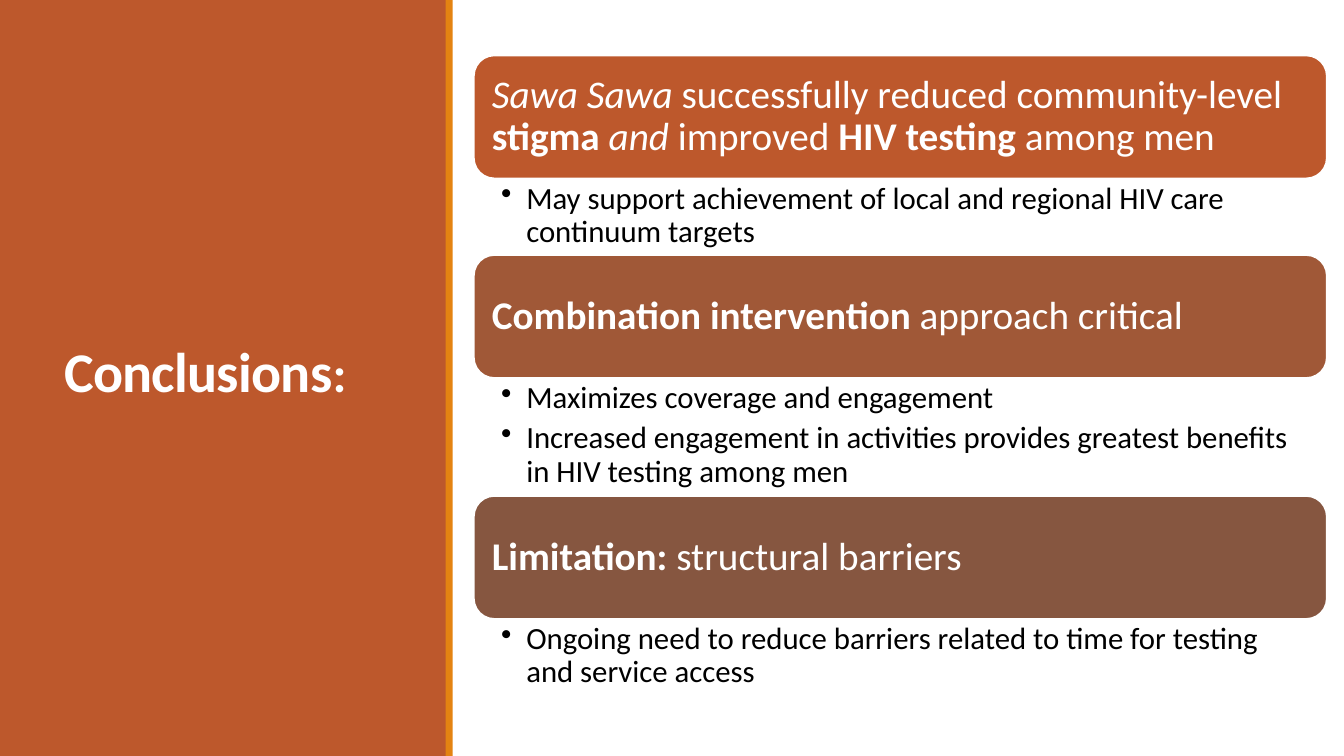
"""Build the conclusions slide."""
from lxml import etree
from pptx import Presentation
from pptx.dml.color import RGBColor
from pptx.enum.shapes import MSO_SHAPE
from pptx.enum.text import MSO_ANCHOR, PP_ALIGN
from pptx.oxml.ns import qn
from pptx.util import Inches, Pt

RECT, ROUND = MSO_SHAPE.RECTANGLE, MSO_SHAPE.ROUNDED_RECTANGLE
TOP, MIDDLE, LEFT = MSO_ANCHOR.TOP, MSO_ANCHOR.MIDDLE, PP_ALIGN.LEFT
WHITE = RGBColor(0xFF, 0xFF, 0xFF)
BLACK = RGBColor(0x00, 0x00, 0x00)
RUST = RGBColor(0xBD, 0x58, 0x2C)
SIENNA = RGBColor(0xA0, 0x58, 0x37)
BROWN = RGBColor(0x86, 0x56, 0x40)
ORANGE = RGBColor(0xE4, 0x83, 0x12)

LIST_LEFT, LIST_WIDTH = 4.7, 8.46
LIST_TOP, HEADING_HEIGHT = 0.55, 1.22
SECTIONS = [
    (RUST, 0.76,
     [("Sawa Sawa ", "i"), ("successfully reduced community-level ", ""),
      ("stigma ", "b"), ("and", "i"), (" improved ", ""),
      ("HIV testing", "b"), (" among men", "")],
     ["May support achievement of local and regional HIV care continuum targets"]),
    (SIENNA, 1.17,
     [("Combination intervention ", "b"), ("approach critical", "")],
     ["Maximizes coverage and engagement",
      "Increased engagement in activities provides greatest benefits in HIV testing among men"]),
    (BROWN, 0.76,
     [("Limitation: ", "b"), ("structural barriers", "")],
     ["Ongoing need to reduce barriers related to time for testing and service access"]),
]


class SlideBuilder:
    """Hold the slide and its style, and add each kind of element."""

    def __init__(self, slide, font="Calibri"):
        self.shapes = slide.shapes
        self.font = font

    def box(self, kind, fill, x, y, w, h, line=None):
        sp = self.shapes.add_shape(kind, Inches(x), Inches(y), Inches(w), Inches(h))
        sp.shadow.inherit = False
        sp.fill.solid()
        sp.fill.fore_color.rgb = fill
        if line is None:
            sp.line.fill.background()
        else:
            sp.line.color.rgb = line
            sp.line.width = Pt(1.25)
        return sp

    def frame(self, sp, anchor, insets):
        tf = sp.text_frame
        tf.word_wrap = True
        tf.vertical_anchor = anchor
        left, top, right, bottom = insets
        tf.margin_left, tf.margin_right = Inches(left), Inches(right)
        tf.margin_top, tf.margin_bottom = Inches(top), Inches(bottom)
        return tf

    def text_box(self, x, y, w, h, anchor, insets):
        sp = self.shapes.add_textbox(Inches(x), Inches(y), Inches(w), Inches(h))
        return self.frame(sp, anchor, insets)

    def run(self, p, text, size, color, style=""):
        r = p.add_run()
        r.text = text
        r.font.name = self.font
        r.font.size = Pt(size)
        r.font.color.rgb = color
        r.font.bold = "b" in style
        r.font.italic = "i" in style
        return r

    def title(self, parts, x, y, w, h):
        p = self.text_box(x, y, w, h, MIDDLE, (0.1, 0.05, 0.1, 0.05)).paragraphs[0]
        p.line_spacing = 0.85
        for text, size in parts:
            r = self.run(p, text, size, WHITE, "b")
            r.font._element.set("spc", "-50")

    def heading(self, parts, fill, y):
        sp = self.box(ROUND, fill, LIST_LEFT, y, LIST_WIDTH, HEADING_HEIGHT, WHITE)
        p = self.frame(sp, MIDDLE, (0.12,) * 4).paragraphs[0]
        p.alignment = LEFT
        p.line_spacing = 0.9
        for text, style in parts:
            self.run(p, text, 28, WHITE, style)

    def bullets(self, items, y, h):
        tf = self.text_box(LIST_LEFT, y, LIST_WIDTH, h, TOP, (0.27, 0.04, 0.22, 0.04))
        for i, item in enumerate(items):
            p = tf.add_paragraph() if i else tf.paragraphs[0]
            p.line_spacing = 0.9
            p.space_after = Pt(5)
            pPr = p._p.get_or_add_pPr()
            pPr.set("marL", str(Inches(0.25)))
            pPr.set("indent", str(Inches(-0.25)))
            etree.SubElement(pPr, qn("a:buChar")).set("char", "•")
            self.run(p, item, 22, BLACK)


def main():
    prs = Presentation()
    prs.slide_width, prs.slide_height = Inches(13.33), Inches(7.5)
    s = SlideBuilder(prs.slides.add_slide(prs.slide_layouts[6]))
    s.box(RECT, RUST, 0, 0, 4.43, 7.5)
    s.box(RECT, ORANGE, 4.42, 0, 0.07, 7.5)
    s.title([("Conclusions", 40), (":", 36)], 0.54, 0.57, 3.37, 6.31)
    y = LIST_TOP
    for fill, height, heading, items in SECTIONS:
        s.heading(heading, fill, y)
        s.bullets(items, y + HEADING_HEIGHT, height)
        y += HEADING_HEIGHT + height
    prs.save("out.pptx")


if __name__ == "__main__":
    main()
